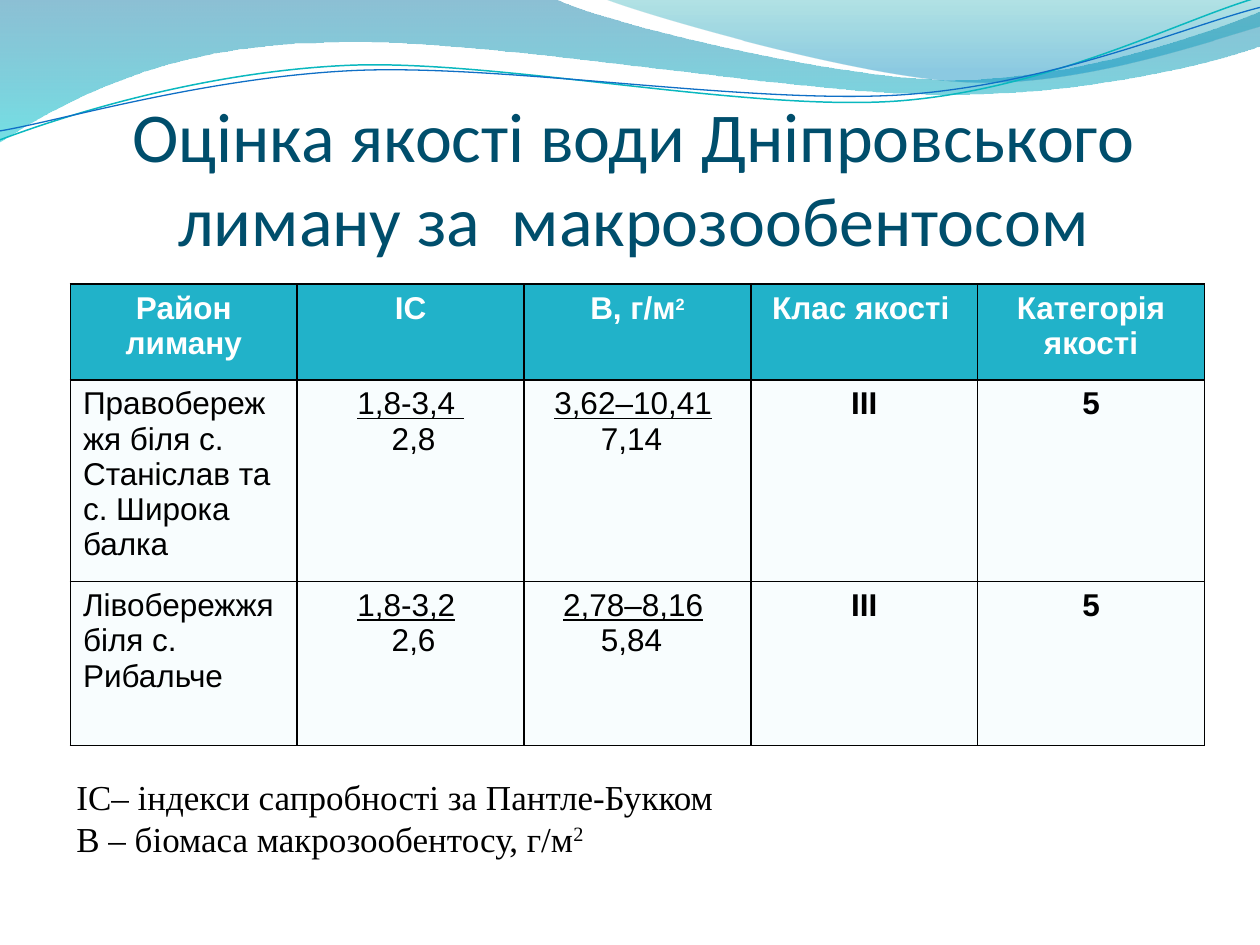
from lxml.etree import SubElement as Sub
from pptx import Presentation
from pptx.dml.color import RGBColor
from pptx.enum.text import MSO_ANCHOR as Anchor, PP_ALIGN as Align
from pptx.oxml.ns import qn
from pptx.util import Cm, Pt


def paint(code):
    return RGBColor.from_string(code)


def write(frame, lines, size=18, font="Arial", color="000000", bold=False,
          align=Align.LEFT):
    """Each line is a text or a list of (text, run format) pairs."""
    for i, line in enumerate(lines):
        para = frame.paragraphs[0] if i == 0 else frame.add_paragraph()
        para.alignment = align
        for text, form in [(line, {})] if isinstance(line, str) else line:
            run = para.add_run()
            run.text = text
            face = run.font
            face.name, face.bold = font, bold
            face.size = Pt(form.get("size", size))
            face.color.rgb = paint(color)
            if form.get("under"):
                face.underline = True
            if form.get("sup"):
                run._r.get_or_add_rPr().set("baseline", "30000")
            for side in ("marL", "marR"):
                if side in form:
                    para._p.get_or_add_pPr().set(side, str(Cm(form[side])))


class Deck:
    edge = "000000"
    head = "21B2C9"
    body = "F8FDFE"

    def __init__(self, wide, high):
        self.file = Presentation()
        self.file.slide_width, self.file.slide_height = Cm(wide), Cm(high)
        self.slide = self.file.slides.add_slide(self.file.slide_layouts[6])

    def shape(self, parts, close):
        """Parts are lines (x, y) or cubic curves (six numbers)."""
        spots = [(Cm(p[k]), Cm(p[k + 1]))
                 for p in parts for k in range(0, len(p), 2)]
        pen = self.slide.shapes.build_freeform(*spots[0])
        pen.add_line_segments(spots[1:], close=close)
        form = pen.convert_to_shape()
        form.shadow.inherit = False
        # Join each three points of a curve into one cubic segment
        steps = iter(list(form._element.iter(qn("a:lnTo"))))
        for part in parts[1:]:
            step = next(steps)
            if len(part) == 6:
                step.addprevious(bend := step.makeelement(qn("a:cubicBezTo")))
                for leg in (step, next(steps), next(steps)):
                    bend.append(leg[0])
                    leg.getparent().remove(leg)
        return form

    def wave(self, parts, stops):
        form = self.shape(parts, True)
        form.line.fill.background()
        form.fill.gradient()
        form.fill.gradient_angle = 270
        for stop, (place, code, _) in zip(form.fill.gradient_stops, stops):
            stop.position = place
            stop.color.rgb = paint(code)
        tints = form._element.spPr.iter(qn("a:srgbClr"))
        for tint, (_, _, alpha) in zip(list(tints), stops):
            Sub(tint, qn("a:alpha")).set("val", str(alpha * 1000))

    def curve(self, parts, code, width):
        form = self.shape(parts, False)
        form.rotation = 357.3
        form.fill.background()
        form.line.color.rgb = paint(code)
        form.line.width = Pt(width)

    def text(self, box, lines, anchor=Anchor.TOP, pad=(0.25, 0.13), **form):
        frame = self.slide.shapes.add_textbox(*map(Cm, box)).text_frame
        frame.word_wrap = True
        frame.vertical_anchor = anchor
        frame.margin_left = frame.margin_right = Cm(pad[0])
        frame.margin_top, frame.margin_bottom = Cm(pad[1]), Cm(pad[-1])
        write(frame, lines, **form)

    def border(self, cell):
        props = cell._tc.get_or_add_tcPr()
        for n, side in enumerate(("lnL", "lnR", "lnT", "lnB")):
            line = Sub(props, qn("a:" + side), w=str(Pt(1)))
            props.insert(n, line)
            fill = Sub(line, qn("a:solidFill"))
            Sub(fill, qn("a:srgbClr"), val=self.edge)

    def table(self, box, highs, rows):
        grid = self.slide.shapes.add_table(
            len(rows), len(rows[0]), *map(Cm, box)).table
        for row, high in zip(grid.rows, highs):
            row.height = Cm(high)
        for r, row in enumerate(rows):
            for c, lines in enumerate(row):
                cell = grid.cell(r, c)
                cell.fill.solid()
                cell.fill.fore_color.rgb = paint(self.body if r else self.head)
                self.border(cell)
                write(cell.text_frame, lines,
                      color="000000" if r else "FFFFFF",
                      bold=r == 0 or c > 2,
                      align=Align.LEFT if r and c == 0 else Align.CENTER)


def ratio(span, mean, tail=" ", **shift):
    """An underlined range above its mean."""
    return [[(span, {"under": True}), (tail, {})], [(mean, shift)]]


def main():
    deck = Deck(25.4, 19.05)

    # Waves along the top
    deck.wave([(0, -0.03), (11.18, -0.03),
               (12.09, 0.43, 16.87, 1.6, 19.25, 1.6),
               (21.67, 1.6, 24.33, 0.66, 25.4, 0.23), (25.43, 0.91),
               (24.97, 1.12, 22.1, 1.93, 18.95, 1.9),
               (15.8, 1.9, 9.7, 0.71, 6.53, 0.86),
               (3.28, 0.89, 1.17, 2.11, -0.03, 2.87)],
              [(0, "0074A1", 45), (1, "00C6CF", 55)])
    deck.wave([(12.17, -0.03), (12.93, 0.28, 17.32, 1.57, 19.53, 1.65),
               (21.74, 1.75, 24.41, 0.81, 25.4, 0.53), (25.4, 0)],
              [(0, "00A1A9", 30), (0.8, "008BBF", 45)])
    deck.curve([(-0.05, 2.22), (1.19, 1.82, 4.02, 1.04, 7.05, 1.05),
                (10.05, 1.07, 15.02, 2.37, 18.08, 2.29),
                (21.13, 2.2, 23.87, 0.91, 25.41, 0.55)], "0AB8BF", 0.85)
    deck.curve([(-0.04, 2.04), (1.16, 1.9, 4.18, 1.15, 7.2, 1.16),
                (10.25, 1.18, 15.13, 2.23, 18.18, 2.17),
                (21.21, 2.1, 23.93, 1.06, 25.45, 0.75)], "0F6FC6", 0.75)

    # Title
    deck.text((1.34, 2.08, 22.86, 3.18),
              ["Оцінка якості води Дніпровського лиману за  макрозообентосом"],
              anchor=Anchor.BOTTOM, pad=(0, 0.13, 0), size=40,
              font="Calibri", color="004E6C", align=Align.CENTER)

    # Water quality table
    deck.table((1.42, 5.73, 22.86, 9.29), (1.93, 4.06, 3.3), [
        [["Район лиману"], ["ІС"],
         [[("В, г/м", {}), ("2", {"sup": True, "size": 16})]],
         [[("Клас якості", {"marR": 0.14})]], ["Категорія якості"]],
        [["Правобережжя біля с. Станіслав та с. Широка балка"],
         ratio("1,8-3,4 ", "2,8", "", marL=0.12),
         ratio("3,62–10,41", "7,14", marR=0.24),
         ["ІІІ"], ["5"]],
        [["Лівобережжя біля с. Рибальче"],
         ratio("1,8-3,2", "2,6", marL=0.12),
         ratio("2,78–8,16", "5,84", marR=0.24),
         ["ІІІ"], ["5"]],
    ])

    # Key to the symbols
    deck.text((1.29, 15.5, 22.96, 1.96),
              ["ІС– індекси сапробності за Пантле-Букком",
               [("В – біомаса макрозообентосу, г/м", {}), ("2", {"sup": True})]],
              size=20, font="Times New Roman")

    deck.file.save("out.pptx")


if __name__ == "__main__":
    main()
